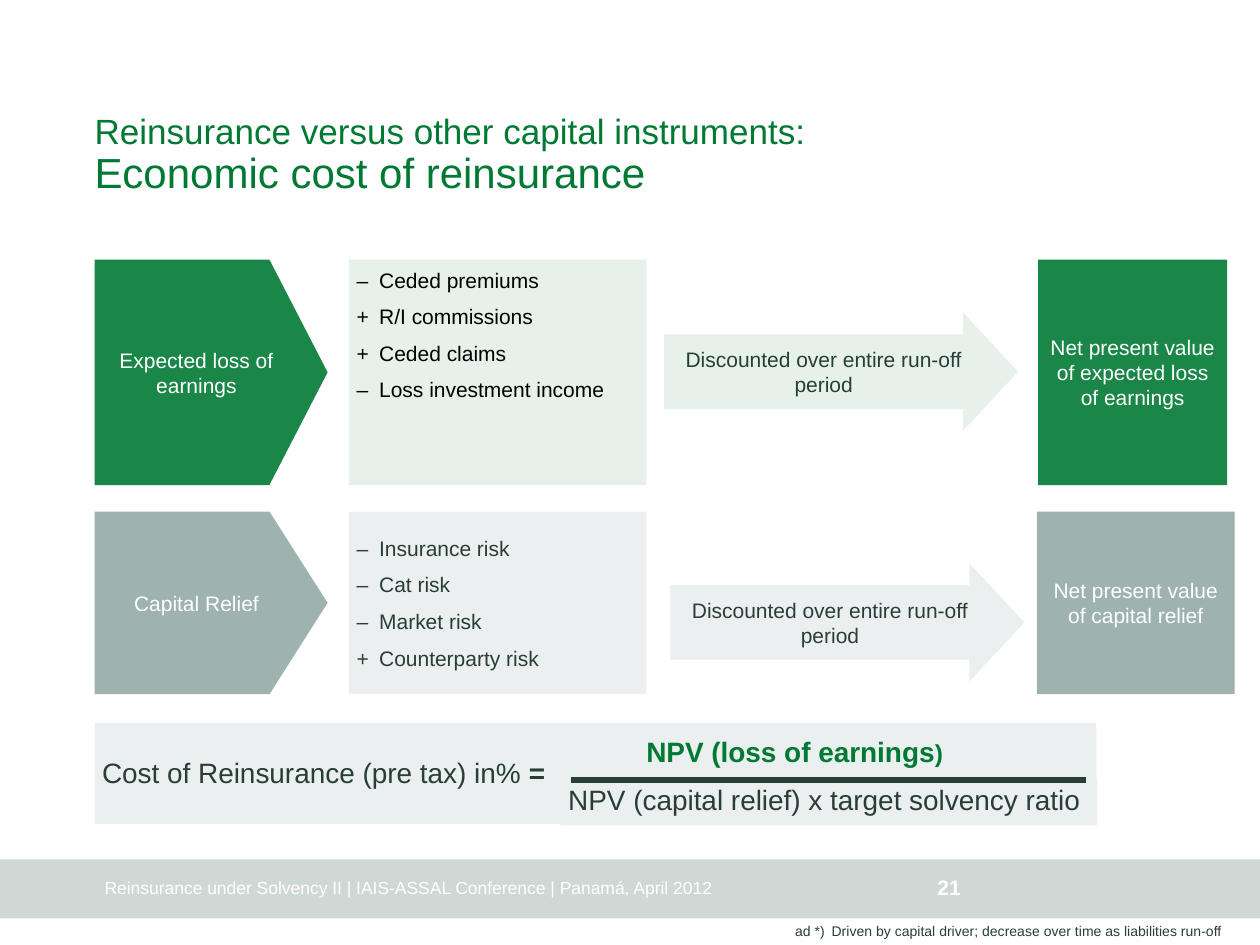
from lxml.etree import SubElement
from pptx import Presentation
from pptx.dml.color import RGBColor
from pptx.enum.shapes import MSO_CONNECTOR as Line, MSO_SHAPE as Shape
from pptx.enum.text import MSO_ANCHOR as Anchor, PP_ALIGN as Align
from pptx.oxml.ns import qn
from pptx.util import Inches, Pt

COLORS = {
    "green": "007934", "loss": "1A8749", "loss_light": "E5F1EA",
    "relief": "9EB3AF", "relief_light": "ECEFEF", "footer": "D0D8D6",
    "ink": "283E36", "black": "000000", "white": "FFFFFF",
}
SLIDE_W, SLIDE_H = 10, 7.5
LEFT = 0.75
STAGE_W, DRIVERS_X, DRIVERS_W = 1.85, 2.77, 2.36
ARROW_W, ARROW_H = 2.81, 0.94
INSET = 0.06
DISCOUNTING = "Discounted over entire run-off period"

ROWS = [
    {"top": 2.06, "height": 1.79, "dark": "loss", "light": "loss_light",
     "stage": "Expected loss of earnings", "point": 0.258,
     "drivers": [("–", "Ceded premiums"), ("+", "R/I commissions"),
                 ("+", "Ceded claims"), ("–", "Loss investment income")],
     "drivers_color": "black", "drivers_anchor": Anchor.TOP,
     "arrow": (5.27, 2.48), "result": "Net present value of expected loss of earnings",
     "result_x": 8.24, "result_w": 1.5},
    {"top": 4.06, "height": 1.45, "dark": "relief", "light": "relief_light",
     "stage": "Capital Relief", "point": 0.318,
     "drivers": [("–", "Insurance risk"), ("–", "Cat risk"),
                 ("–", "Market risk"), ("+", "Counterparty risk")],
     "drivers_color": "ink", "drivers_anchor": Anchor.MIDDLE,
     "arrow": (5.32, 4.47), "result": "Net present value of capital relief",
     "result_x": 8.23, "result_w": 1.57},
]

# Each run is (text, font format)
TITLE = [("Reinsurance versus other capital instruments:\v", {"size": Pt(20)}),
         ("Economic cost of reinsurance", {"size": Pt(24)})]
FORMULA = [
    ((LEFT, 5.74, 7.95, 0.8), "ink", Anchor.MIDDLE,
     [("Cost of Reinsurance (pre tax) in% ", {}), ("=", {"bold": True})]),
    ((5.07, 5.79, 3.63, 0.38), "green", Anchor.TOP,
     [("NPV (loss of earnings", {"bold": True}),
      (")", {"bold": True, "size": Pt(14)})]),
    ((4.45, 6.17, 4.26, 0.38), "ink", Anchor.TOP,
     [("NPV (capital relief) x target solvency ratio", {})]),
]
FRACTION_BAR = (4.53, 8.62, 6.19)
FOOTER = "Reinsurance under Solvency II | IAIS-ASSAL Conference | Panamá, April 2012"
PAGE_NUMBER = "21"
FOOTNOTE = "ad *)\tDriven by capital driver; decrease over time as liabilities run-off"


def rgb(name):
    return RGBColor.from_string(COLORS[name])


def set_all(target, values):
    for name, value in values.items():
        setattr(target, name, value)


def write(part, paragraphs, size, color, anchor=Anchor.MIDDLE, inset=(INSET, INSET),
          wrap=True, hang=0, **layout):
    """Fill a shape with paragraphs, each a list of (text, font format) runs."""
    side, edge = map(Inches, inset)
    frame = part.text_frame
    set_all(frame, {"word_wrap": wrap, "vertical_anchor": anchor,
                    "margin_left": side, "margin_right": side,
                    "margin_top": edge, "margin_bottom": edge})
    for index, runs in enumerate(paragraphs):
        paragraph = frame.add_paragraph() if index else frame.paragraphs[0]
        if hang:
            properties = paragraph._p.get_or_add_pPr()
            properties.set("marL", str(Inches(hang)))
            properties.set("indent", str(-Inches(hang)))
        set_all(paragraph, {"alignment": Align.LEFT, **layout})
        if index:
            paragraph.space_before = Pt(6.5)
        for text, font_format in runs:
            if text.endswith("\v"):
                run = paragraph.add_run()
                run.text = text.rstrip("\v")
                paragraph.add_line_break()
            else:
                run = paragraph.add_run()
                run.text = text
            set_all(run.font, {"name": "Arial", "size": Pt(size), **font_format})
            run.font.color.rgb = rgb(color)


def add_block(slide, box, fill, preset=Shape.RECTANGLE, adjustments=()):
    block = slide.shapes.add_shape(preset, *map(Inches, box))
    block.shadow.inherit = False
    block.fill.solid()
    block.fill.fore_color.rgb = rgb(fill)
    block.line.fill.background()
    for index, value in enumerate(adjustments):
        block.adjustments[index] = value
    return block


def add_label(slide, box, runs, size, color, **options):
    label = slide.shapes.add_textbox(*map(Inches, box))
    write(label, [runs], size, color, **options)


def add_row(slide, row):
    top, height = row["top"], row["height"]
    stage = add_block(slide, (LEFT, top, STAGE_W, height), row["dark"],
                      Shape.PENTAGON, [row["point"]])
    drivers = add_block(slide, (DRIVERS_X, top, DRIVERS_W, height), row["light"])
    arrow = add_block(slide, (*row["arrow"], ARROW_W, ARROW_H), row["light"],
                      Shape.RIGHT_ARROW, [0.628, 0.465])
    result = add_block(slide, (row["result_x"], top, row["result_w"], height), row["dark"])

    write(drivers, [[(f"{sign}\t{driver}", {})] for sign, driver in row["drivers"]],
          12, row["drivers_color"], row["drivers_anchor"], hang=0.18)
    for part, text, color in [(stage, row["stage"], "white"),
                              (arrow, DISCOUNTING, "ink"),
                              (result, row["result"], "white")]:
        write(part, [[(text, {})]], 12, color, alignment=Align.CENTER)


def add_formula(slide):
    for box, color, anchor, runs in FORMULA:
        term = add_block(slide, box, "relief_light")
        write(term, [runs], 16, color, anchor, line_spacing=0.96)
    start, end, y = map(Inches, FRACTION_BAR)
    bar = slide.shapes.add_connector(Line.STRAIGHT, start, y, end, y)
    bar.line.color.rgb = rgb("ink")
    bar.line.width = Pt(3)
    SubElement(bar._element.spPr, qn("a:effectLst"))


def main():
    deck = Presentation()
    deck.slide_width, deck.slide_height = Inches(SLIDE_W), Inches(SLIDE_H)
    slide = deck.slides.add_slide(deck.slide_layouts[6])
    flush = {"anchor": Anchor.BOTTOM, "inset": (0, 0)}

    add_block(slide, (0, 6.82, SLIDE_W, 0.47), "footer")
    add_label(slide, (0.83, 6.98, 6.46, 0.15), [(FOOTER, {})], 10, "white",
              wrap=False, **flush)
    add_label(slide, (7.44, 6.94, 0.2, 0.2), [(PAGE_NUMBER, {"bold": True})], 12, "white",
              wrap=False, **flush)
    add_label(slide, (LEFT, 1.02, 6.69, 0.55), TITLE, 20, "green",
              line_spacing=0.9, **flush)
    for row in ROWS:
        add_row(slide, row)
    add_formula(slide)
    add_label(slide, (5.63, 7.27, 4.17, 0.24), [(FOOTNOTE, {})], 8, "ink",
              anchor=Anchor.TOP, inset=(0.1, 0.05), hang=0.29, alignment=Align.RIGHT)
    deck.save("out.pptx")


if __name__ == "__main__":
    main()
